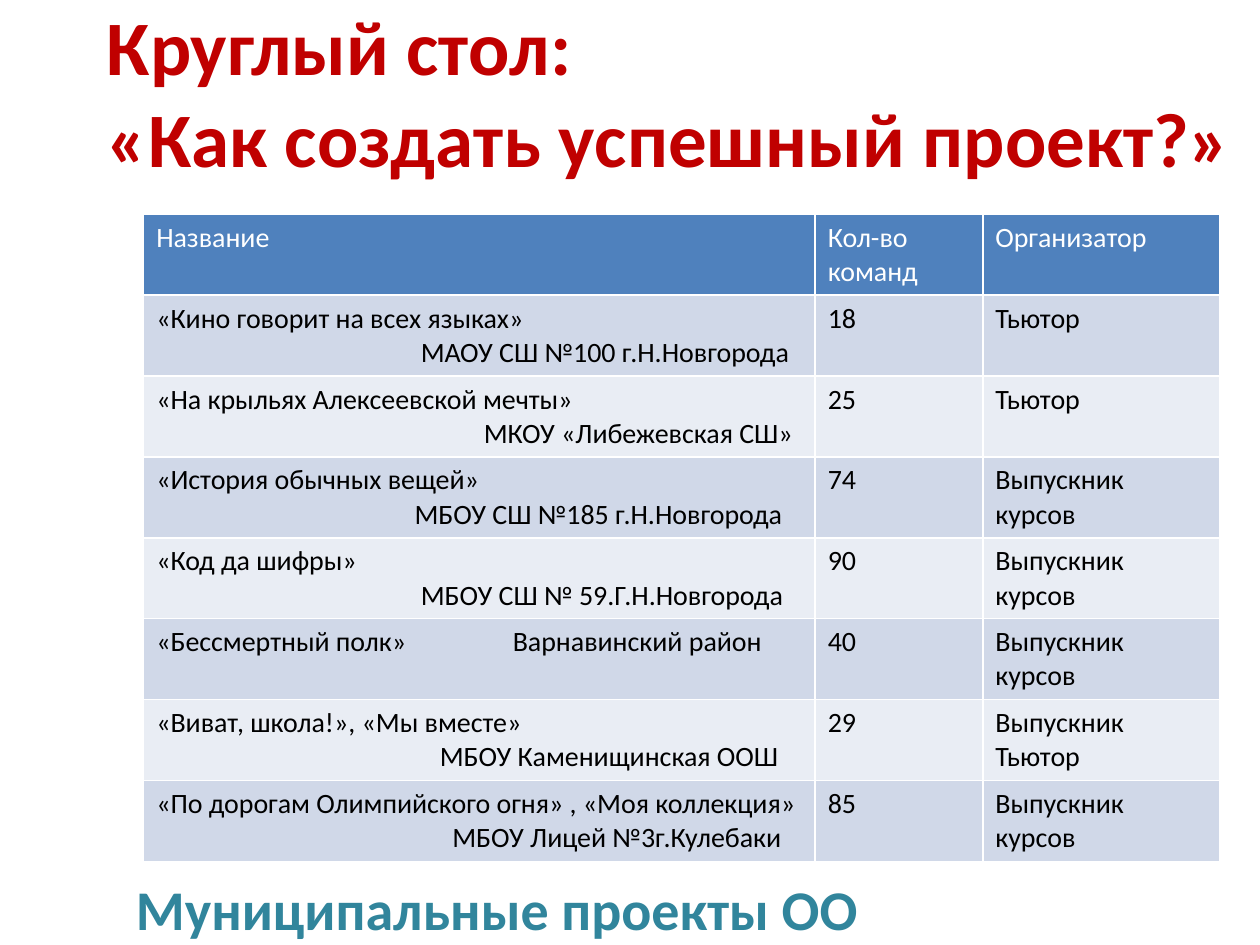
import pptx
import pptx.dml.color
import pptx.enum.text
import pptx.util
from lxml import etree
from pptx.util import Inches

CELL_FORMAT = {"name": "Calibri", "size": pptx.util.Pt(16), "bold": False}
HEADING_FORMAT = {"name": "Calibri", "bold": True}
COLUMN_WIDTHS = (5.33, 1.33, 1.88)
HEADER = ("Название", "Кол-во команд", "Организатор")
HEADER_FILL, BAND_FILLS = "4F81BD", ("D0D8E8", "E9EDF4")
GRADUATE = "Выпускник курсов"

# Project, school, indent of the school, number of teams, organizers
PROJECTS = (
    ("«Кино говорит на всех языках»", "МАОУ СШ №100 г.Н.Новгорода", 2.1, "18", ["Тьютор"]),
    ("«На крыльях Алексеевской мечты»", "МКОУ «Либежевская СШ»", 2.6, "25", ["Тьютор"]),
    ("«История обычных вещей»", "МБОУ СШ №185 г.Н.Новгорода", 2.05, "74", [GRADUATE]),
    ("«Код да шифры»", "МБОУ СШ № 59.Г.Н.Новгорода", 2.1, "90", [GRADUATE]),
    ("«Бессмертный полк»\tВарнавинский район", None, 2.83, "40", [GRADUATE]),
    ("«Виват, школа!», «Мы вместе»", "МБОУ Каменищинская ООШ", 2.25, "29", ["Выпускник", "Тьютор"]),
    ("«По дорогам Олимпийского огня» , «Моя коллекция»", "МБОУ Лицей №3г.Кулебаки", 2.35,
     "85", [GRADUATE]),
)


def color(value):
    return pptx.dml.color.RGBColor.from_string(value)


def add_span(para, text, text_color, values):
    span = para.add_run()
    span.text = text
    for name, value in values.items():
        setattr(span.font, name, value)
    span.font.color.rgb = color(text_color)


def add_tab_stop(para, position):
    properties = para._p.get_or_add_pPr()
    tabs = etree.SubElement(properties, pptx.oxml.ns.qn("a:tabLst"))
    etree.SubElement(tabs, pptx.oxml.ns.qn("a:tab"), pos=str(Inches(position)), algn="l")


def add_heading(page, box, lines, size, text_color):
    frame = page.shapes.add_textbox(*map(Inches, box)).text_frame
    frame.word_wrap = True
    frame.vertical_anchor = pptx.enum.text.MSO_ANCHOR.MIDDLE
    para = frame.paragraphs[0]
    for number, line in enumerate(lines):
        if number:
            para.add_line_break()
        add_span(para, line, text_color, {**HEADING_FORMAT, "size": pptx.util.Pt(size)})


def fill_cell(cell, lines, fill, text_color="000000"):
    cell.fill.solid()
    cell.fill.fore_color.rgb = color(fill)
    frame = cell.text_frame
    for number, line in enumerate(lines):
        para = frame.add_paragraph() if number else frame.paragraphs[0]
        add_span(para, line, text_color, CELL_FORMAT)
    return frame.paragraphs


def add_projects_table(page, box):
    table = page.shapes.add_table(len(PROJECTS) + 1, len(HEADER), *map(Inches, box)).table
    for column, width in zip(table.columns, COLUMN_WIDTHS):
        column.width = Inches(width)

    # Header row
    for column, label in enumerate(HEADER):
        fill_cell(table.cell(0, column), [label], HEADER_FILL, "FFFFFF")

    # Project rows in alternating bands
    for row, (project, school, indent, teams, organizers) in enumerate(PROJECTS, 1):
        fill = BAND_FILLS[(row - 1) % 2]
        names = [project, school] if school else [project]
        paras = fill_cell(table.cell(row, 0), names, fill)
        if school:
            paras[1]._p.get_or_add_pPr().set("marL", str(Inches(indent)))
        else:
            add_tab_stop(paras[0], indent)
        fill_cell(table.cell(row, 1), [teams], fill)
        fill_cell(table.cell(row, 2), organizers, fill)


def main():
    deck = pptx.Presentation()
    deck.slide_width, deck.slide_height = Inches(10), Inches(7.5)
    page = deck.slides.add_slide(deck.slide_layouts[6])
    add_heading(page, (0.98, 6.66, 6.23, 1.09), ["Муниципальные проекты ОО"], 32, "31859C")
    add_projects_table(page, (1.14, 1.7, 8.54, 5.14))
    add_heading(page, (0.75, 0.13, 9.13, 1.18),
                ["Круглый стол:", "«Как создать успешный проект?»"], 44, "C00000")
    deck.save("out.pptx")


if __name__ == "__main__":
    main()
